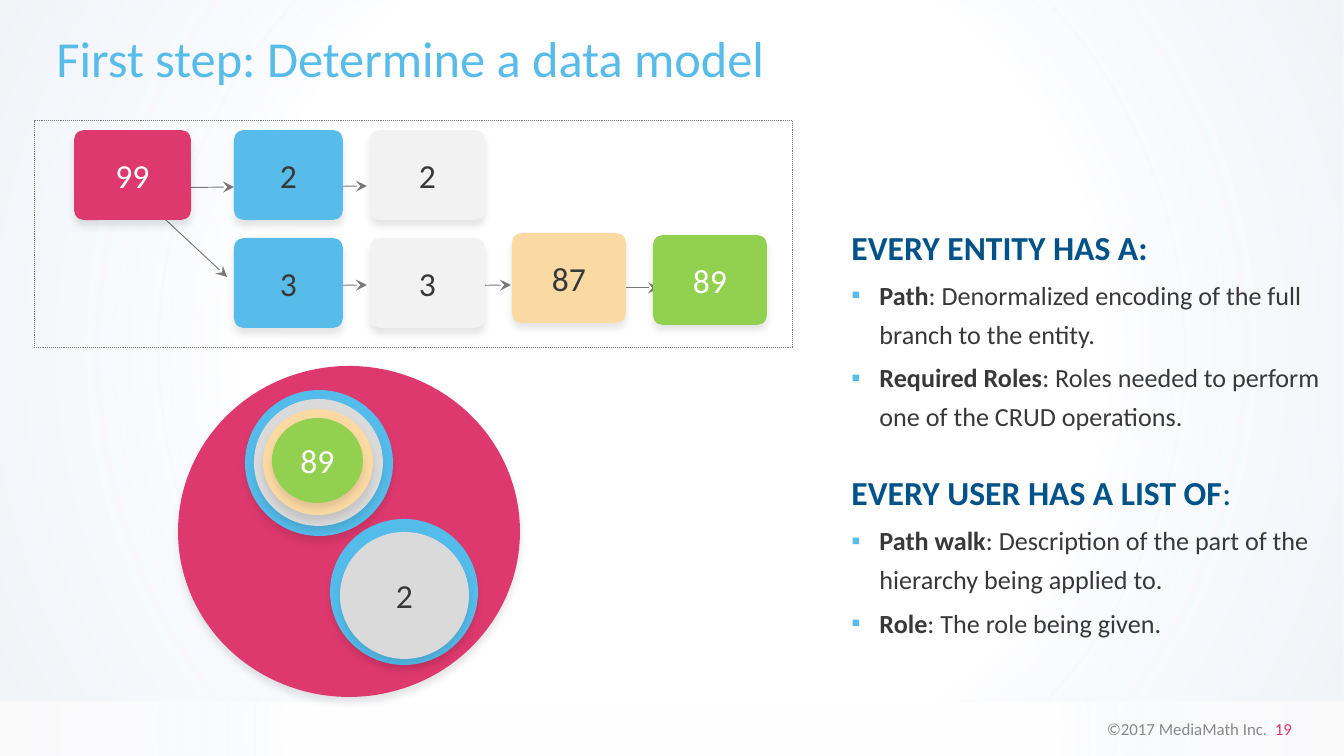
"""Build the slide on choosing a data model for an entity hierarchy."""
from dataclasses import dataclass

import lxml.etree
import pptx
import pptx.dml.color
import pptx.enum.dml
import pptx.enum.shapes
import pptx.enum.text
import pptx.oxml
import pptx.oxml.ns
import pptx.util

EMU_PER_PX = 9144000 / 1344
SHAPES = pptx.enum.shapes.MSO_SHAPE
ALIGN = pptx.enum.text.PP_ALIGN
ANCHOR = pptx.enum.text.MSO_ANCHOR


@dataclass(frozen=True)
class Theme:
    font: str = "Calibri"
    title_size: int = 27
    heading_size: int = 18
    node_size: int = 18
    body_size: int = 14
    footer_size: int = 9
    sky: str = "58BCEB"
    ring: str = "54BCEB"
    pink: str = "DE396E"
    sand: str = "FBD9A3"
    green: str = "92D050"
    pale: str = "F2F2F2"
    silver: str = "DADADA"
    navy: str = "005288"
    ink: str = "383838"
    white: str = "FFFFFF"
    line: str = "797979"
    muted: str = "888888"


THEME = Theme()


def px(length):
    return round(length * EMU_PER_PX)


def rgb(value):
    return pptx.dml.color.RGBColor.from_string(value)


def add_xml(parent, tag, content="", **attributes):
    element = pptx.oxml.parse_xml(f'<a:{tag} {pptx.oxml.ns.nsdecls("a")}>{content}</a:{tag}>')
    for name, value in attributes.items():
        element.set(name, str(value))
    parent.append(element)
    return element


def set_font(font, size, color):
    font.name = THEME.font
    font.size = pptx.util.Pt(size)
    font.color.rgb = rgb(color)


def add_shape(shapes, kind, box):
    shape = shapes.add_shape(kind, *map(px, box))
    shape.fill.background()
    shape.line.fill.background()
    shape.shadow.inherit = False
    return shape


def add_backdrop(shapes, box, stops):
    shape = add_shape(shapes, SHAPES.RECTANGLE, box)
    shape.fill.gradient()
    gradient = shape.element.spPr.find(pptx.oxml.ns.qn("a:gradFill"))
    for child in list(gradient):
        gradient.remove(child)
    content = "".join(
        f'<a:gs pos="{position * 1000}"><a:srgbClr val="{color}">'
        f'<a:alpha val="{alpha * 1000}"/></a:srgbClr></a:gs>'
        for position, color, alpha in stops)
    add_xml(gradient, "gsLst", content)
    add_xml(gradient, "path", '<a:fillToRect l="50000" t="50000" r="50000" b="50000"/>').set("path", "circle")


def add_node(shapes, kind, box, fill, text="", color=THEME.ink):
    shape = add_shape(shapes, kind, box)
    shape.fill.solid()
    shape.fill.fore_color.rgb = rgb(fill)
    if kind == SHAPES.ROUNDED_RECTANGLE:
        shape.adjustments[0] = 0.11
    effects = shape.element.spPr.find(pptx.oxml.ns.qn("a:effectLst"))
    add_xml(effects, "outerShdw", '<a:srgbClr val="000000"><a:alpha val="10000"/></a:srgbClr>',
            blurRad=pptx.util.Pt(4), dist=pptx.util.Pt(3), dir=5400000, rotWithShape=0)
    if text:
        frame = shape.text_frame
        frame.margin_left = frame.margin_right = frame.margin_top = frame.margin_bottom = 0
        frame.vertical_anchor = ANCHOR.MIDDLE
        paragraph = frame.paragraphs[0]
        paragraph.text = text
        paragraph.alignment = ALIGN.CENTER
        set_font(paragraph.font, THEME.node_size, color)


def add_arrow(shapes, start, end):
    arrow = shapes.add_connector(pptx.enum.shapes.MSO_CONNECTOR.STRAIGHT, *map(px, (*start, *end)))
    arrow.line.color.rgb = rgb(THEME.line)
    arrow.line.width = pptx.util.Pt(0.5)
    outline = arrow.line._get_or_add_ln()
    add_xml(outline, "headEnd", type="oval")
    add_xml(outline, "tailEnd", type="stealth")
    add_xml(arrow.element.spPr, "effectLst")


def place_placeholder(placeholder, box):
    placeholder.left, placeholder.top, placeholder.width, placeholder.height = map(px, box)
    placeholder.element.getparent().append(placeholder.element)
    frame = placeholder.text_frame
    frame.auto_size = pptx.enum.text.MSO_AUTO_SIZE.NONE
    frame.word_wrap = True
    return frame


def add_title(slide, text):
    frame = place_placeholder(slide.shapes.title, (43, 27, 1254, 66))
    frame.vertical_anchor = ANCHOR.MIDDLE
    paragraph = frame.paragraphs[0]
    paragraph.text = text
    paragraph.alignment = ALIGN.LEFT
    paragraph.line_spacing = pptx.util.Pt(30)
    set_font(paragraph.font, THEME.title_size, THEME.sky)


def add_body_paragraph(paragraph, strong, plain, is_heading, space):
    properties = paragraph._p.get_or_add_pPr()
    properties.set("marL", str(px(3 if is_heading else 31)))
    properties.set("indent", str(px(0 if is_heading else -28)))
    paragraph.space_before = pptx.util.Pt(space)
    if is_heading:
        add_xml(properties, "buNone")
        set_font(paragraph.font, THEME.heading_size, THEME.navy)
    else:
        paragraph.line_spacing = 1.25
        add_xml(properties, "buClr", f'<a:srgbClr val="{THEME.sky}"/>')
        add_xml(properties, "buChar", char="▪")
        set_font(paragraph.font, THEME.body_size, THEME.ink)
    for text, bold in ((strong, True), (plain, False)):
        if text:
            run = paragraph.add_run()
            run.text = text
            run.font.bold = bold


def add_body(slide, sections):
    frame = place_placeholder(slide.placeholders[1], (835, 220, 509, 434))
    frame.vertical_anchor = ANCHOR.TOP
    paragraph = frame.paragraphs[0]
    space = 0
    for heading, items in sections:
        add_body_paragraph(paragraph, *heading, True, space)
        for item in items:
            add_body_paragraph(frame.add_paragraph(), *item, False, 2.2)
        if heading != sections[-1][0]:
            paragraph = frame.add_paragraph()
            space = 21.5


def add_footer(shapes, text, number):
    frame = shapes.add_textbox(*map(px, (992, 712, 313, 34))).text_frame
    frame.word_wrap = True
    paragraph = frame.paragraphs[0]
    paragraph.alignment = ALIGN.RIGHT
    for content, color in ((text, THEME.muted), (number, THEME.pink)):
        run = paragraph.add_run()
        run.text = content
        set_font(run.font, THEME.footer_size, color)


def add_tree(slide):
    shapes = slide.shapes.add_group_shape().shapes
    for start, end in (((575, 288), (659, 288)), ((427, 286), (511, 285)),
                       ((284, 286), (367, 285)), ((284, 187), (367, 186)),
                       ((124, 181), (227, 277)), ((149, 188), (234, 187))):
        add_arrow(shapes, start, end)
    for left, top, width, fill, text, color in (
            (74, 130, 117, THEME.pink, "99", THEME.white),
            (234, 130, 109, THEME.sky, "2", THEME.ink),
            (234, 238, 109, THEME.sky, "3", THEME.ink),
            (370, 130, 115, THEME.pale, "2", THEME.ink),
            (370, 238, 115, THEME.pale, "3", THEME.ink),
            (512, 233, 114, THEME.sand, "87", THEME.ink),
            (653, 235, 114, THEME.green, "89", THEME.white)):
        add_node(shapes, SHAPES.ROUNDED_RECTANGLE, (left, top, width, 90), fill, text, color)
    panel = add_shape(shapes, SHAPES.RECTANGLE, (35, 121, 758, 227))
    panel.line.color.rgb = rgb(THEME.line)
    panel.line.width = pptx.util.Pt(0.5)
    panel.line.dash_style = pptx.enum.dml.MSO_LINE.ROUND_DOT


def add_nested_sets(slide):
    shapes = slide.shapes.add_group_shape().shapes
    for box, fill, *label in (
            ((178, 366, 342, 331), THEME.pink),
            ((245, 390, 148, 146), THEME.ring),
            ((254, 399, 129, 127), THEME.silver),
            ((263, 409, 110, 106), THEME.sand),
            ((272, 418, 91, 85), THEME.green, "89", THEME.white),
            ((330, 519, 148, 146), THEME.ring),
            ((340, 532, 129, 127), THEME.silver, "2")):
        add_node(shapes, SHAPES.OVAL, box, fill, *label)


def main():
    presentation = pptx.Presentation()
    presentation.slide_width, presentation.slide_height = px(1344), px(756)
    slide = presentation.slides.add_slide(presentation.slide_layouts[1])
    add_backdrop(slide.shapes, (-1, 703, 1345, 55),
                 ((57, "FFFFFF", 100), (78, "F0F4FC", 29), (99, "F0EEF2", 30)))
    add_footer(slide.shapes, "©2017 MediaMath Inc.  ", "19")
    add_backdrop(slide.shapes, (-1, 0, 1345, 702),
                 ((57, "FFFFFF", 100), (78, "F0F4FC", 50), (99, "E3EBF2", 50)))
    add_title(slide, "First step: Determine a data model")
    add_tree(slide)
    add_nested_sets(slide)
    add_body(slide, (
        (("EVERY ENTITY HAS A:", ""), (
            ("Path", ": Denormalized encoding of the full branch to the entity."),
            ("Required Roles", ": Roles needed to perform one of the CRUD operations."))),
        (("EVERY USER HAS A LIST OF", ":"), (
            ("Path walk", ": Description of the part of the hierarchy being applied to."),
            ("Role", ": The role being given.")))))
    presentation.save("out.pptx")


if __name__ == "__main__":
    main()
